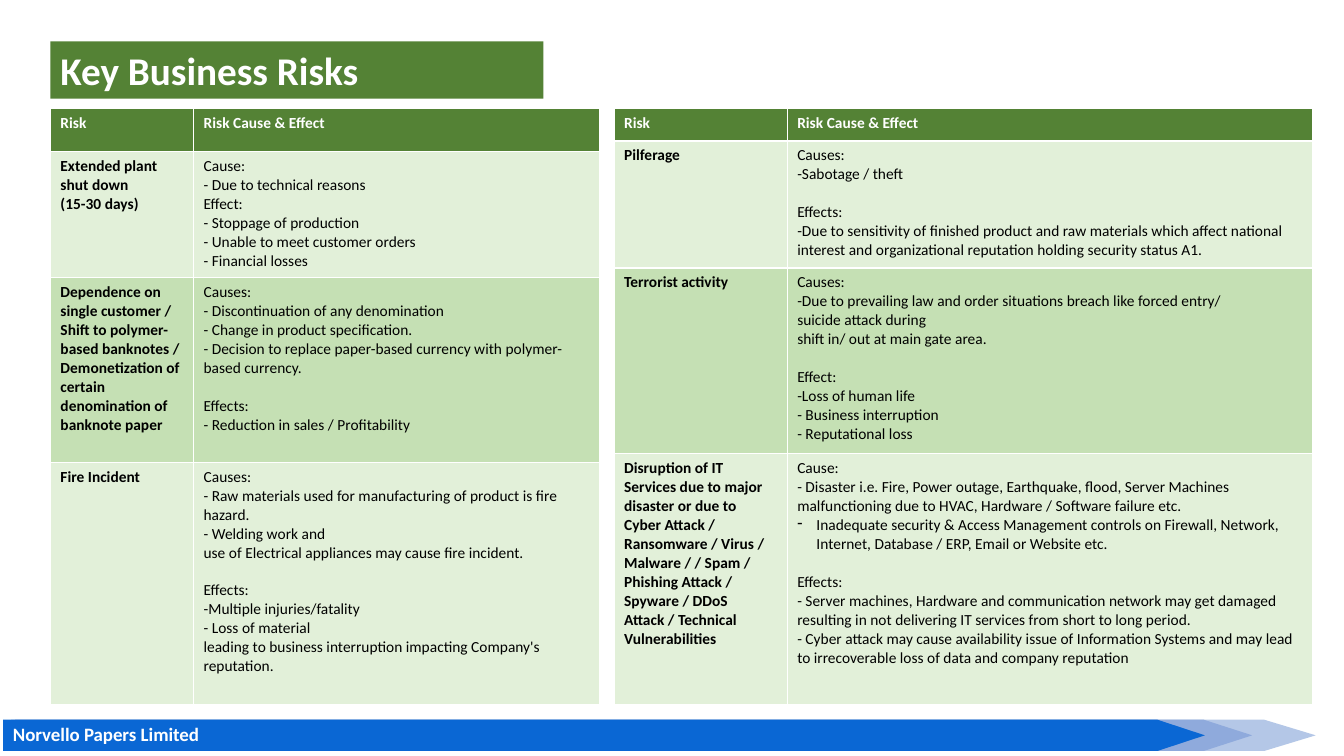
from lxml.etree import SubElement
from pptx import Presentation
from pptx.dml.color import RGBColor
from pptx.enum.text import MSO_ANCHOR, PP_ALIGN
from pptx.oxml.ns import qn
from pptx.util import Inches, Pt

WHITE = RGBColor(0xFF, 0xFF, 0xFF)
BLACK = RGBColor(0, 0, 0)
GREEN = RGBColor(0x54, 0x82, 0x35)
PALE_GREEN = RGBColor(0xE2, 0xF0, 0xD9)
MID_GREEN = RGBColor(0xC5, 0xE0, 0xB4)
BLUE = RGBColor(0x0A, 0x67, 0xD4)
MID_BLUE = RGBColor(0x8F, 0xAA, 0xDC)
PALE_BLUE = RGBColor(0xB4, 0xC7, 0xE7)
FONT = "Calibri"
LINE_GAP = Pt(13.4)
HANGING = "-\t"

PLANT_RISKS = [
    ([["Extended plant shut down", "(15-30 days)"]],
     [["Cause:", "- Due to technical reasons", "Effect:", "- Stoppage of production",
       "- Unable to meet customer orders", "- Financial losses"]]),
    ([["Dependence on single customer / Shift to polymer- based banknotes / "
       "Demonetization of certain denomination of banknote paper"]],
     [["Causes:", "- Discontinuation of any denomination",
       "- Change in product specification.",
       "- Decision to replace paper-based currency with polymer-based currency."],
      ["Effects:", "- Reduction in sales / Profitability"]]),
    ([["Fire Incident"]],
     [["Causes:", "- Raw materials used for manufacturing of product is fire hazard.",
       "- Welding work and", "use of Electrical appliances may cause fire incident."],
      ["Effects:", "-Multiple injuries/fatality", "- Loss of material",
       "leading to business interruption impacting Company's reputation."]]),
]
SECURITY_RISKS = [
    ([["Pilferage"]],
     [["Causes:", "-Sabotage / theft"],
      ["Effects:", "-Due to sensitivity of finished product and raw materials which affect "
       "national interest and organizational reputation holding security status A1."]]),
    ([["Terrorist activity"]],
     [["Causes:", "-Due to prevailing law and order situations breach like forced entry/",
       "suicide attack during", "shift in/ out at main gate area."],
      ["Effect:", "-Loss of human life", "- Business interruption", "- Reputational loss"]]),
    ([["Disruption of IT Services due to major disaster or due to",
       "Cyber Attack / Ransomware / Virus / Malware / / Spam / Phishing Attack / "
       "Spyware / DDoS Attack / Technical Vulnerabilities"]],
     [["Cause:", "- Disaster i.e. Fire, Power outage, Earthquake, flood, Server Machines "
       "malfunctioning due to HVAC, Hardware / Software failure etc.",
       HANGING + "Inadequate security & Access Management controls on Firewall, Network, "
       "Internet, Database / ERP, Email or Website etc."],
      ["Effects:", "- Server machines, Hardware and communication network may get damaged "
       "resulting in not delivering IT services from short to long period.",
       "- Cyber attack may cause availability issue of Information Systems and may lead "
       "to irrecoverable loss of data and company reputation"]]),
]


def style_runs(p, size, color, bold):
    for r in p.runs:
        r.font.name = FONT
        r.font.size = Pt(size)
        r.font.bold = bold
        r.font.color.rgb = color


def hang_bullet(p):
    pPr = p._p.get_or_add_pPr()
    pPr.set("marL", str(Inches(0.19)))
    pPr.set("indent", str(-Inches(0.19)))
    SubElement(pPr, qn("a:buChar")).set("char", "-")


def fill_cell(cell, blocks, fill, color, bold):
    cell.fill.solid()
    cell.fill.fore_color.rgb = fill
    tf = cell.text_frame
    for b, lines in enumerate(blocks):
        for i, line in enumerate(lines):
            p = tf.paragraphs[0] if b == i == 0 else tf.add_paragraph()
            p.text = line.removeprefix(HANGING)
            if line.startswith(HANGING):
                hang_bullet(p)
            if b and i == 0:
                p.space_before = LINE_GAP
            style_runs(p, 11, color, bold)


def add_risk_table(s, box, col_weights, row_weights, risks):
    left, top, width, height = box
    table = s.shapes.add_table(len(row_weights), len(col_weights),
                               *map(Inches, box)).table
    for col, weight in zip(table.columns, col_weights):
        col.width = Inches(width * weight / sum(col_weights))
    for row, weight in zip(table.rows, row_weights):
        row.height = Inches(height * weight / sum(row_weights))
    for c, heading in enumerate(("Risk", "Risk Cause & Effect")):
        fill_cell(table.cell(0, c), [[heading]], GREEN, WHITE, True)
    for n, risk in enumerate(risks, 1):
        for c, blocks in enumerate(risk):
            fill = PALE_GREEN if n % 2 else MID_GREEN
            fill_cell(table.cell(n, c), blocks, fill, BLACK, c == 0)


def add_title(s, box, text):
    title = s.shapes.title
    title.left, title.top, title.width, title.height = map(Inches, box)
    title.fill.solid()
    title.fill.fore_color.rgb = GREEN
    tf = title.text_frame
    tf.text = text
    tf.word_wrap = True
    tf.vertical_anchor = MSO_ANCHOR.MIDDLE
    p = tf.paragraphs[0]
    p.alignment = PP_ALIGN.LEFT
    style_runs(p, 28, WHITE, True)


def add_arrow_band(s, box, tip, color):
    left, top, width, height = box
    right, bottom = left + width, top + height
    outline = [(right - tip, top), (right, top + height / 2),
               (right - tip, bottom), (left, bottom)]
    builder = s.shapes.build_freeform(Inches(left), Inches(top))
    builder.add_line_segments([(Inches(x), Inches(y)) for x, y in outline], close=True)
    sp = builder.convert_to_shape()
    sp.shadow.inherit = False
    sp.fill.solid()
    sp.fill.fore_color.rgb = color
    sp.line.fill.background()


def add_footer(s, top, height, text):
    for left, width, tip, color in ((0.11, 12.94, 0.51, PALE_BLUE),
                                    (0.15, 12.27, 0.48, MID_BLUE),
                                    (0.03, 11.92, 0.47, BLUE)):
        add_arrow_band(s, (left, top, width, height), tip, color)
    label = s.shapes.add_textbox(Inches(0.03), Inches(top - 0.02),
                                 Inches(4.74), Inches(height + 0.02))
    tf = label.text_frame
    tf.word_wrap = True
    tf.text = text
    style_runs(tf.paragraphs[0], 13.5, WHITE, True)


def main():
    prs = Presentation()
    prs.slide_width, prs.slide_height = Inches(13.33), Inches(7.5)
    s = prs.slides.add_slide(prs.slide_layouts[5])
    add_footer(s, 7.14, 0.31, "Norvello Papers Limited")
    add_title(s, (0.5, 0.41, 4.89, 0.57), "Key Business Risks")
    add_risk_table(s, (0.5, 1.08, 5.45, 5.91), (142, 403), (42, 125, 183, 240), PLANT_RISKS)
    add_risk_table(s, (6.09, 1.08, 6.93, 5.91), (172, 522), (32, 126, 184, 249), SECURITY_RISKS)
    prs.save("out.pptx")


if __name__ == "__main__":
    main()
